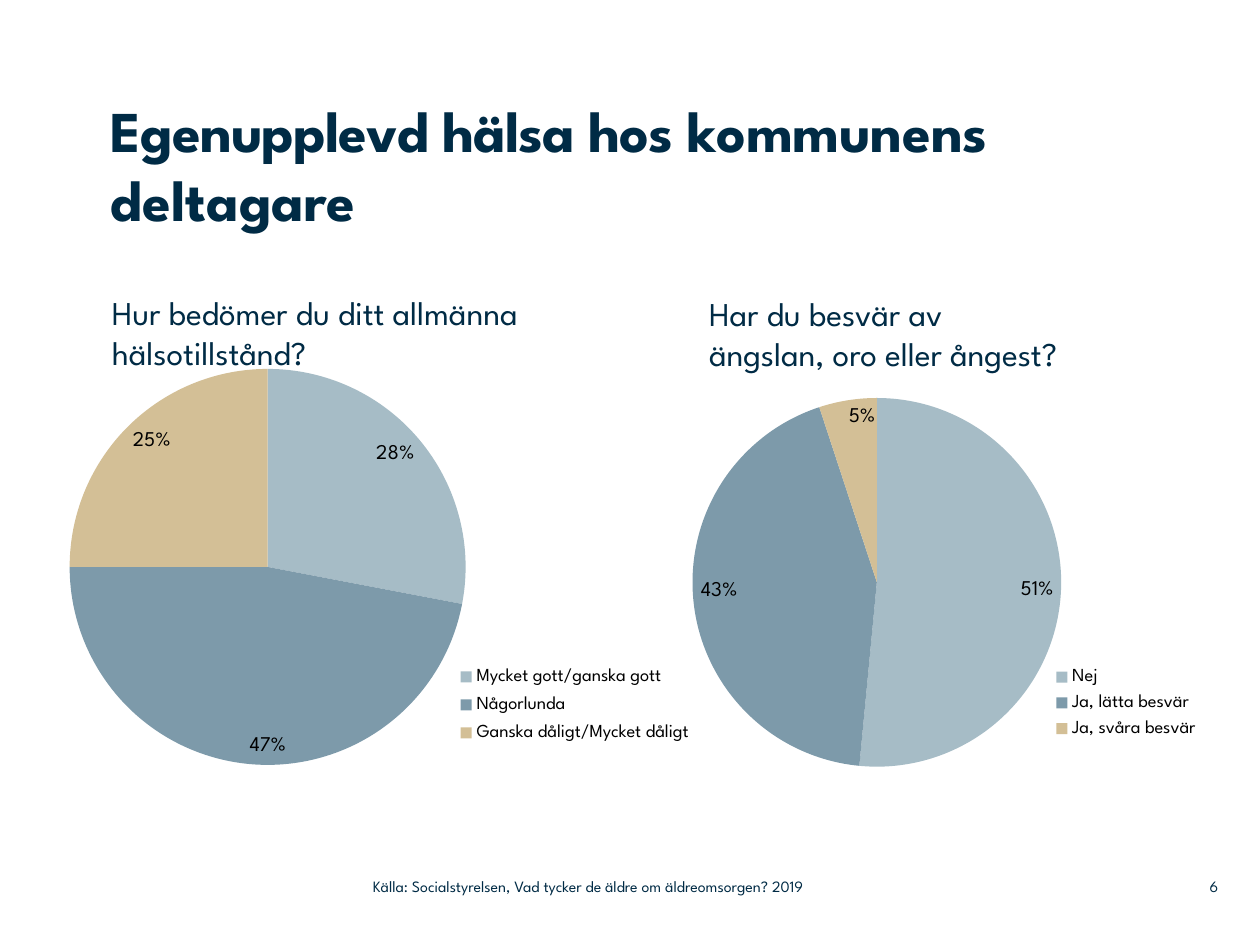
from dataclasses import dataclass
from typing import NamedTuple

from lxml.etree import SubElement
from pptx import Presentation
from pptx.chart.data import CategoryChartData
from pptx.dml.color import RGBColor
from pptx.enum.chart import XL_CHART_TYPE, XL_LABEL_POSITION, XL_LEGEND_POSITION
from pptx.enum.text import MSO_ANCHOR, MSO_AUTO_SIZE, PP_ALIGN
from pptx.oxml.ns import qn
from pptx.slide import Slide
from pptx.util import Inches, Pt

FONT = "League Spartan"
COLORS = {
    "ink": "002B45",
    "label": "000000",
    "good": "A6BCC6",
    "fair": "7D9AAA",
    "poor": "D3BF96",
}
SLICES = ("good", "fair", "poor")
COLUMNS, ROWS = 100, 75
SLIDE_WIDTH, SLIDE_HEIGHT = Inches(10), Inches(7.5)


class Area(NamedTuple):
    column: float
    row: float
    columns: float
    rows: float

    def lengths(self) -> tuple[int, ...]:
        column_width, row_height = SLIDE_WIDTH / COLUMNS, SLIDE_HEIGHT / ROWS
        return (
            round(self.column * column_width),
            round(self.row * row_height),
            round(self.columns * column_width),
            round(self.rows * row_height),
        )


class Share(NamedTuple):
    x: float
    y: float
    w: float
    h: float


@dataclass
class TextBlock:
    area: Area
    runs: tuple[str, ...]
    size: float
    bold: bool = False
    inset: float = 0
    tracking: float = 0
    alignment: PP_ALIGN = PP_ALIGN.LEFT
    anchor: MSO_ANCHOR = MSO_ANCHOR.TOP
    grows: bool = False


@dataclass
class Pie:
    area: Area
    answers: dict[str, int]
    plot: Share
    legend: Share


TEXTS = [
    TextBlock(Area(8.8, 7.5, 82.7, 14.2), ("Egenupplevd hälsa hos ", "kommunens deltagare"),
              33, bold=True, tracking=-0.5),
    TextBlock(Area(7.9, 22.7, 40.7, 7.4), ("Hur bedömer du ditt allmänna hälsotillstånd?",),
              19, inset=0.1, grows=True),
    TextBlock(Area(55.3, 22.8, 37.1, 7.4), ("Har du besvär av \vängslan, oro eller ångest?",),
              19, inset=0.1, grows=True),
    TextBlock(Area(92, 68.9, 4.7, 2.9), ("6",), 9,
              alignment=PP_ALIGN.RIGHT, anchor=MSO_ANCHOR.MIDDLE),
    TextBlock(Area(29.6, 68.9, 44.3, 2.9),
              ("Källa: Socialstyrelsen, Vad tycker de äldre om äldreomsorgen? 2019",),
              9, anchor=MSO_ANCHOR.MIDDLE),
]
PIES = [
    Pie(Area(3.9, 27.9, 54.2, 34.2),
        {"Mycket gott/ganska gott": 28, "Någorlunda": 47, "Ganska dåligt/Mycket dåligt": 25},
        Share(0.03, 0.04, 0.58, 0.92), Share(0.57, 0.71, 0.4, 0.22)),
    Pie(Area(49, 28.1, 54.2, 34.2),
        {"Nej": 51, "Ja, lätta besvär": 43, "Ja, svåra besvär": 5},
        Share(0.11, 0.1, 0.54, 0.86), Share(0.62, 0.71, 0.25, 0.2)),
]


def color(name: str) -> RGBColor:
    return RGBColor.from_string(COLORS[name])


def draw_text(slide: Slide, block: TextBlock) -> None:
    frame = slide.shapes.add_textbox(*block.area.lengths()).text_frame
    frame.word_wrap = True
    frame.auto_size = MSO_AUTO_SIZE.SHAPE_TO_FIT_TEXT if block.grows else MSO_AUTO_SIZE.NONE
    frame.vertical_anchor = block.anchor
    frame.margin_left = frame.margin_right = Inches(block.inset)
    frame.margin_top = frame.margin_bottom = Inches(block.inset / 2)
    paragraph = frame.paragraphs[0]
    paragraph.alignment = block.alignment
    if len(block.runs) == 1:
        paragraph.text = block.runs[0]
    else:
        for text in block.runs:
            paragraph.add_run().text = text
    if block.tracking:
        properties = paragraph.runs[0].font._element
        properties.set("spc", str(round(block.tracking * 100)))
    font = paragraph.font
    font.name, font.size, font.bold = FONT, Pt(block.size), block.bold
    font.color.rgb = color("ink")


def place(parent, share: Share, inner: bool = False) -> None:
    for old in parent.findall(qn("c:layout")):
        parent.remove(old)
    layout = SubElement(parent, qn("c:layout"))
    parent.remove(layout)
    parent.insert(0 if inner else 1, layout)
    manual = SubElement(layout, qn("c:manualLayout"))
    if inner:
        SubElement(manual, qn("c:layoutTarget")).set("val", "inner")
    for axis in ("x", "y"):
        SubElement(manual, qn(f"c:{axis}Mode")).set("val", "edge")
    for name, value in share._asdict().items():
        SubElement(manual, qn(f"c:{name}")).set("val", str(value))


def draw_pie(slide: Slide, pie: Pie) -> None:
    data = CategoryChartData()
    data.categories = list(pie.answers)
    data.add_series("Series 1", list(pie.answers.values()))
    chart = slide.shapes.add_chart(XL_CHART_TYPE.PIE, *pie.area.lengths(), data).chart
    chart.has_title = False
    chart.font.name, chart.font.size = FONT, Pt(10)
    chart.font.color.rgb = color("label")

    plot = chart.plots[0]
    plot.vary_by_categories = True
    for index, name in enumerate(SLICES):
        slice_format = plot.series[0].points[index].format
        slice_format.fill.solid()
        slice_format.fill.fore_color.rgb = color(name)
        slice_format.line.fill.background()

    labels = plot.series[0].data_labels
    labels.show_value = True
    labels.number_format, labels.number_format_is_linked = '0"%"', False
    labels.position = XL_LABEL_POSITION.INSIDE_END
    labels.font.name, labels.font.size = FONT, Pt(12)
    labels.font.color.rgb = color("label")

    chart.has_legend = True
    legend = chart.legend
    legend.position = XL_LEGEND_POSITION.RIGHT
    legend.include_in_layout = False
    legend.font.name, legend.font.size = FONT, Pt(10.5)
    legend.font.color.rgb = color("label")
    place(legend._element, pie.legend)
    place(chart._chartSpace.chart.plotArea, pie.plot, inner=True)


def main() -> None:
    presentation = Presentation()
    presentation.slide_width, presentation.slide_height = SLIDE_WIDTH, SLIDE_HEIGHT
    slide = presentation.slides.add_slide(presentation.slide_layouts[6])
    for block in TEXTS:
        draw_text(slide, block)
    for pie in PIES:
        draw_pie(slide, pie)
    presentation.save("out.pptx")


if __name__ == "__main__":
    main()
